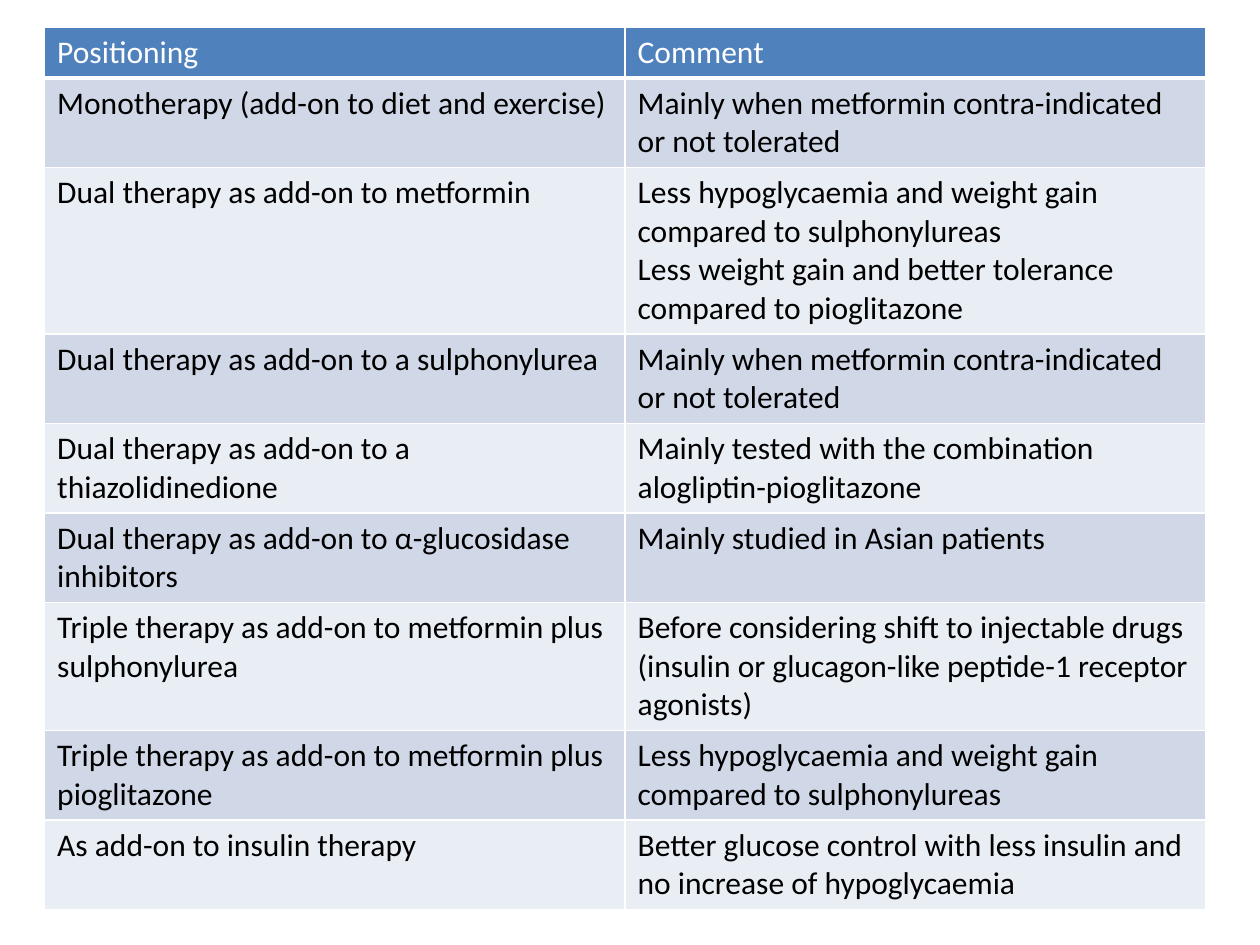
from dataclasses import dataclass

from lxml.etree import SubElement
from pptx import Presentation
from pptx.dml.color import RGBColor
from pptx.oxml.ns import qn
from pptx.slide import Slide
from pptx.util import Pt

WHITE = RGBColor(0xFF, 0xFF, 0xFF)
BLACK = RGBColor(0x00, 0x00, 0x00)
HEADER_BLUE = RGBColor(0x4F, 0x81, 0xBD)
BAND_DARK = RGBColor(0xD0, 0xD8, 0xE8)
BAND_LIGHT = RGBColor(0xE9, 0xED, 0xF4)

NOT_TOLERATED = "Mainly when metformin contra-indicated or not tolerated"
LESS_GAIN = "Less hypoglycaemia and weight gain compared to sulphonylureas"

THERAPIES = [
    ("Positioning", "Comment"),
    ("Monotherapy (add-on to diet and exercise)", NOT_TOLERATED),
    ("Dual therapy as add-on to metformin",
     LESS_GAIN + "\nLess weight gain and better tolerance\ncompared to pioglitazone"),
    ("Dual therapy as add-on to a sulphonylurea", NOT_TOLERATED),
    ("Dual therapy as add-on to a thiazolidinedione",
     "Mainly tested with the combination alogliptin-pioglitazone"),
    ("Dual therapy as add-on to α-glucosidase inhibitors",
     "Mainly studied in Asian patients"),
    ("Triple therapy as add-on to metformin plus sulphonylurea",
     "Before considering shift to injectable drugs "
     "(insulin or glucagon-like peptide-1 receptor agonists)"),
    ("Triple therapy as add-on to metformin plus pioglitazone", LESS_GAIN),
    ("As add-on to insulin therapy",
     "Better glucose control with less insulin and no increase of hypoglycaemia"),
]


def write_text(frame, text, *, font, size, color):
    frame.text = text
    for paragraph in frame.paragraphs:
        paragraph.font.name = font
        paragraph.font.size = Pt(size)
        paragraph.font.color.rgb = color
        for run in paragraph.runs:
            run.font.name = font
            run.font.size = Pt(size)
            run.font.color.rgb = color


def draw_borders(cell, color, widths):
    properties = cell._tc.get_or_add_tcPr()
    for side, width in widths.items():
        line = SubElement(properties, qn(f"a:ln{side}"), w=str(Pt(width)))
        fill = SubElement(line, qn("a:solidFill"))
        SubElement(fill, qn("a:srgbClr"), val=str(color))


@dataclass
class TableSlide:
    slide: Slide
    font: str = "Calibri"
    size: float = 18
    rule: float = 1
    header_rule: float = 3

    def table(self, rows, left, top, column_width, row_height):
        columns = len(rows[0])
        frame = self.slide.shapes.add_table(
            len(rows), columns, Pt(left), Pt(top),
            Pt(column_width * columns), Pt(row_height * len(rows)))
        grid = frame.table
        for column in grid.columns:
            column.width = Pt(column_width)
        for index, texts in enumerate(rows):
            grid.rows[index].height = Pt(row_height)
            for cell, text in zip(grid.rows[index].cells, texts):
                self.cell(cell, text, index)

    def cell(self, cell, text, row):
        is_header = row == 0
        draw_borders(cell, WHITE, {
            "L": self.rule,
            "R": self.rule,
            "T": self.header_rule if row == 1 else self.rule,
            "B": self.header_rule if is_header else self.rule,
        })
        band = BAND_DARK if row % 2 else BAND_LIGHT
        cell.fill.solid()
        cell.fill.fore_color.rgb = HEADER_BLUE if is_header else band
        write_text(cell.text_frame, text, font=self.font, size=self.size,
                   color=WHITE if is_header else BLACK)
        if is_header:
            for paragraph in cell.text_frame.paragraphs:
                for run in paragraph.runs:
                    run.font.bold = False


def main():
    deck = Presentation()
    deck.slide_width, deck.slide_height = Pt(720), Pt(540)
    blank_layout = deck.slide_layouts[6]
    page = TableSlide(deck.slides.add_slide(blank_layout))
    page.table(THERAPIES, left=25.5, top=15.3, column_width=331.7, row_height=29.2)
    deck.save("out.pptx")


if __name__ == "__main__":
    main()
